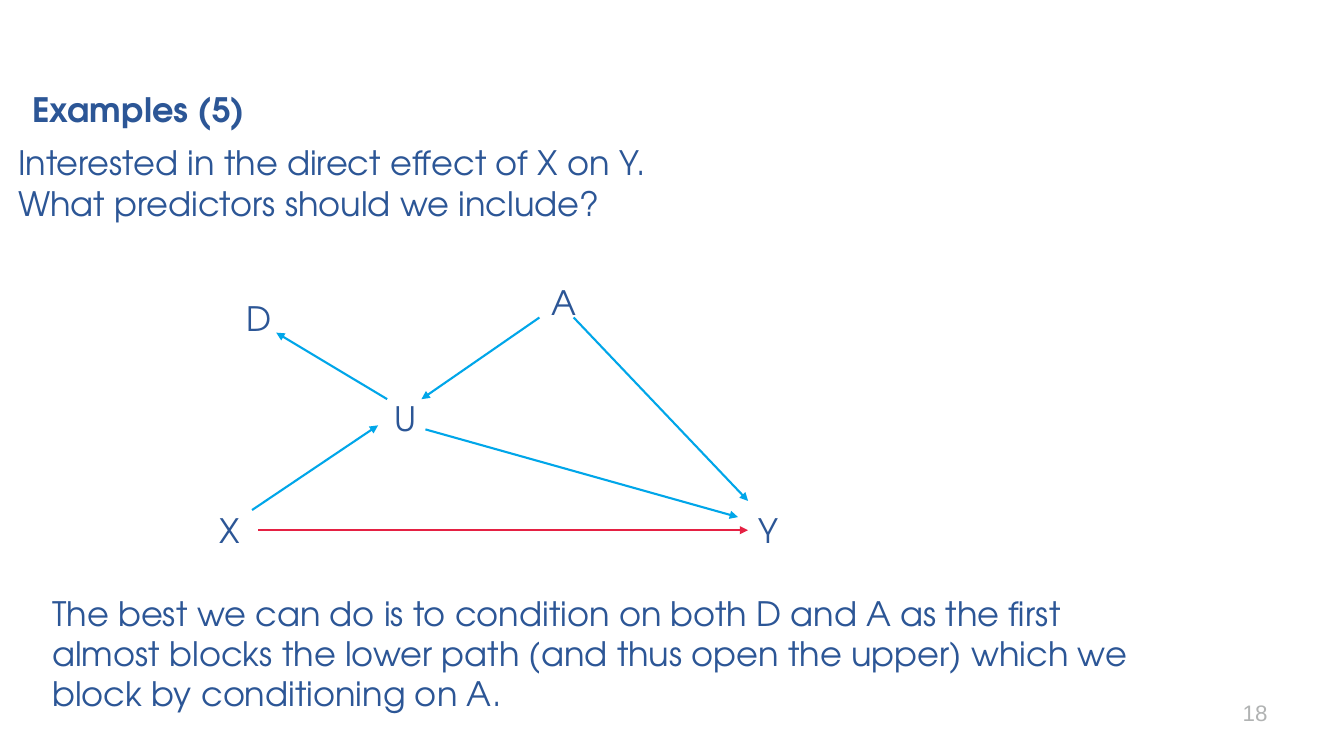
from pptx import Presentation
from pptx import util as u
from pptx.dml.color import RGBColor
from pptx.enum import shapes, text
from pptx.oxml.ns import qn
from lxml import etree

# Content
NAVY, CYAN, RED, GREY = "2C5696", "00A6E9", "E52143", "B1B3B3"
MAIN_FONT = "TeX Gyre Adventor"

TITLE = ("Examples (5)", (0.22, 0.83, 6.04, 0.5))
QUESTION = (["Interested in the direct effect of X on Y.",
             "What predictors should we include?"], (0.08, 1.36, 12.33, 0.91))
ANSWER = ("The best we can do is to condition on both D and A as the first almost "
          "blocks the lower path (and thus open the upper) which we block by "
          "conditioning on A.", (0.42, 5.83, 11.08, 1.31))
PAGE_NUMBER = ("18", (11.17, 6.87, 1.5, 0.4))

NODE_SIZE = (0.6, 0.5)
NODES = {"D": (2.35, 2.91), "A": (5.37, 2.75), "U": (3.81, 3.9),
         "X": (2.08, 5.01), "Y": (7.42, 5.01)}
ARROWS = [  # from, to, colour
    ((5.69, 3.15), (7.42, 4.97), CYAN),  # A to Y
    ((5.35, 3.15), (4.18, 3.96), CYAN),  # A to U
    ((3.84, 3.96), (2.74, 3.3), CYAN),   # U to D
    ((4.22, 4.26), (7.32, 5.13), CYAN),  # U to Y
    ((2.5, 5.06), (3.75, 4.22), CYAN),   # X to U
    ((2.56, 5.26), (7.42, 5.26), RED),   # X to Y
]


def color(value):
    return RGBColor.from_string(value)


def write(box, lines, place, align=text.PP_ALIGN.LEFT, anchor=text.MSO_ANCHOR.TOP,
          ink=NAVY, **font):
    """Place a box and fill it with one paragraph per line."""
    for side, value in zip(("left", "top", "width", "height"), place):
        setattr(box, side, u.Inches(value))
    frame = box.text_frame
    frame.text = "\n".join(lines)
    frame.word_wrap = True
    frame.auto_size = text.MSO_AUTO_SIZE.NONE
    frame.vertical_anchor = anchor
    look = {"name": MAIN_FONT, "size": u.Pt(24), "bold": False, **font}
    for para in frame.paragraphs:
        para.alignment = align
        para.space_before = u.Pt(0)
        if box.is_placeholder:
            props = para._p.get_or_add_pPr()
            props.set("marL", "0")
            props.set("indent", "0")
            etree.SubElement(props, qn("a:buNone"))
        for span in para.runs:
            for key, value in look.items():
                setattr(span.font, key, value)
            span.font.color.rgb = color(ink)


def add_text(page, lines, place, **options):
    write(page.shapes.add_textbox(0, 0, 0, 0), lines, place, **options)


def add_arrow(page, start, end, ink):
    ends = [u.Inches(value) for value in start + end]
    arrow = page.shapes.add_connector(shapes.MSO_CONNECTOR.STRAIGHT, *ends)
    arrow.line.color.rgb = color(ink)
    arrow.line.width = u.Pt(1.5)
    etree.SubElement(arrow.line._get_or_add_ln(), qn("a:tailEnd"), type="triangle")
    etree.SubElement(arrow._element.spPr, qn("a:effectLst"))


def main():
    deck = Presentation()
    deck.slide_width, deck.slide_height = u.Inches(13.33), u.Inches(7.5)
    page = deck.slides.add_slide(deck.slide_layouts[1])

    # Title and question
    title, place = TITLE
    write(page.shapes.title, [title], place, bold=True)
    write(page.placeholders[1], *QUESTION)

    # Causal diagram
    for name, corner in NODES.items():
        add_text(page, [name], corner + NODE_SIZE)
    for arrow in ARROWS:
        add_arrow(page, *arrow)

    # Answer and page number
    answer, place = ANSWER
    add_text(page, [answer], place)
    number, place = PAGE_NUMBER
    add_text(page, [number], place, align=text.PP_ALIGN.RIGHT,
             anchor=text.MSO_ANCHOR.MIDDLE, ink=GREY, name="Arial", size=u.Pt(16))

    deck.save("out.pptx")


if __name__ == "__main__":
    main()
